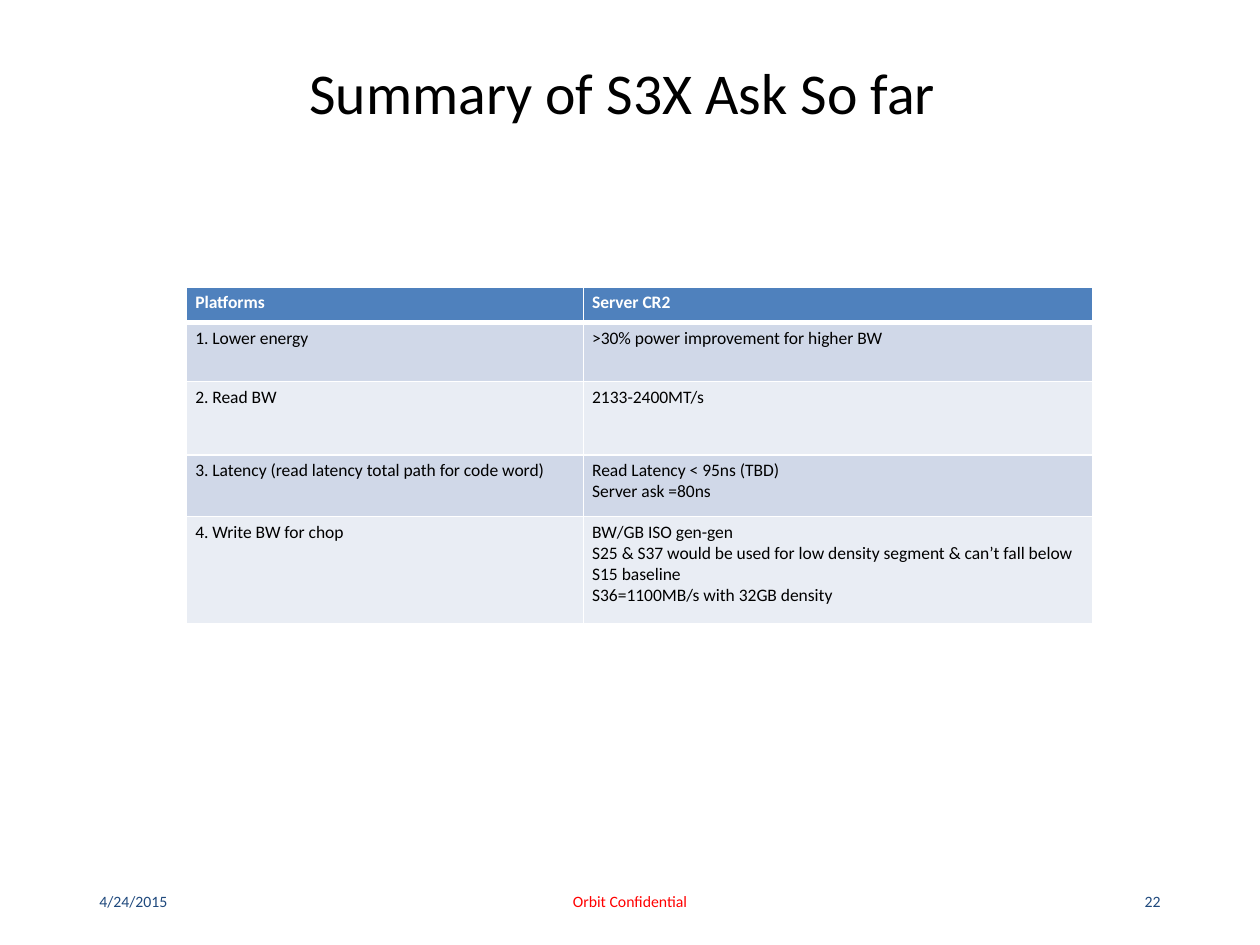
from dataclasses import dataclass

from lxml import etree
from pptx import Presentation
from pptx import util as u
from pptx.dml.color import RGBColor
from pptx.enum import text
from pptx.oxml.ns import qn

ANCHOR, ALIGN = text.MSO_ANCHOR, text.PP_ALIGN


@dataclass(frozen=True)
class Theme:
    font: str = "Calibri"
    white: str = "FFFFFF"
    ink: str = "000000"
    navy: str = "1F497D"
    alert: str = "FF0000"
    head: str = "4F81BD"
    bands: tuple = ("D0D8E8", "E9EDF4")
    title: float = 33
    cell: float = 10
    foot: float = 9


def assign(item, values):
    for name, value in values.items():
        setattr(item, name, value)


class Deck:
    def __init__(self, theme):
        self.theme = theme
        self.show = Presentation()
        assign(self.show, {"slide_width": u.Inches(10), "slide_height": u.Inches(7.5)})
        self.slide = self.show.slides.add_slide(self.show.slide_layouts[5])

    def words(self, frame, lines, size, color, bold=False, **form):
        """Fill a text frame with one paragraph per line."""
        frame.text = "\n".join(lines)
        for para in frame.paragraphs:
            assign(para, form)
            for run in para.runs:
                assign(run.font, {"name": self.theme.font, "size": u.Pt(size), "bold": bold})
                run.font.color.rgb = RGBColor.from_string(color)

    def title(self, line, box):
        shape = self.slide.shapes.title
        assign(shape, dict(zip(("left", "top", "width", "height"), map(u.Inches, box))))
        assign(shape.text_frame, {"word_wrap": True, "vertical_anchor": ANCHOR.MIDDLE,
                                  "auto_size": text.MSO_AUTO_SIZE.NONE})
        self.words(shape.text_frame, [line], self.theme.title, self.theme.ink,
                   alignment=ALIGN.CENTER, line_spacing=0.9)

    def label(self, line, box, color, align):
        frame = self.slide.shapes.add_textbox(*map(u.Inches, box)).text_frame
        assign(frame, {"word_wrap": True, "vertical_anchor": ANCHOR.MIDDLE})
        self.words(frame, [line], self.theme.foot, color, alignment=align)

    def border(self, cell, base):
        """Rule all four sides in white, with its own width at the base."""
        props = cell._tc.get_or_add_tcPr()
        for side, width in (("L", 1), ("R", 1), ("T", 1), ("B", base)):
            line = etree.SubElement(props, qn(f"a:ln{side}"), w=str(u.Pt(width)))
            fill = etree.SubElement(line, qn("a:solidFill"))
            etree.SubElement(fill, qn("a:srgbClr"), val=self.theme.white)

    def table(self, rows, spot, widths, heights):
        look = self.theme
        size = u.Inches(sum(widths)), u.Inches(sum(heights))
        grid = self.slide.shapes.add_table(len(rows), len(widths),
                                           *map(u.Inches, spot), *size).table
        for col, width in zip(grid.columns, widths):
            col.width = u.Inches(width)
        pad = {"margin_left": u.Inches(0.07), "margin_right": u.Inches(0.07),
               "margin_top": u.Inches(0.04), "margin_bottom": u.Inches(0.04)}
        for i, (row, height) in enumerate(zip(rows, heights)):
            head = i == 0
            grid.rows[i].height = u.Inches(height)
            for j, lines in enumerate(row):
                cell = grid.cell(i, j)
                assign(cell, pad)
                self.words(cell.text_frame, lines, look.cell,
                           look.white if head else look.ink, head)
                self.border(cell, 3 if head else 1)
                cell.fill.solid()
                tint = look.head if head else look.bands[(i - 1) % 2]
                cell.fill.fore_color.rgb = RGBColor.from_string(tint)


def main():
    look = Theme()
    deck = Deck(look)
    deck.title("Summary of S3X Ask So far", (0.63, 0.43, 8.62, 0.66))
    rows = [
        (["Platforms"], ["Server CR2"]),
        (["1. Lower energy"], [">30% power improvement for higher BW"]),
        (["2. Read BW"], ["2133-2400MT/s"]),
        (["3. Latency (read latency total path for code word)"],
         ["Read Latency < 95ns (TBD)", "Server ask =80ns"]),
        (["4. Write BW for chop"],
         ["BW/GB ISO gen-gen",
          "S25 & S37 would be used for low density segment & can’t fall below S15 baseline",
          "S36=1100MB/s with 32GB density"]),
    ]
    deck.table(rows, (1.48, 2.28), (3.15, 4.04), (0.28, 0.47, 0.58, 0.49, 0.85))
    feet = [
        ("4/24/2015", 0.69, 2.25, look.navy, ALIGN.LEFT),
        ("Orbit Confidential", 3.31, 3.38, look.alert, ALIGN.CENTER),
        ("22", 7.06, 2.25, look.navy, ALIGN.RIGHT),
    ]
    for line, left, width, color, align in feet:
        deck.label(line, (left, 6.95, width, 0.4), color, align)
    deck.show.save("out.pptx")


if __name__ == "__main__":
    main()
